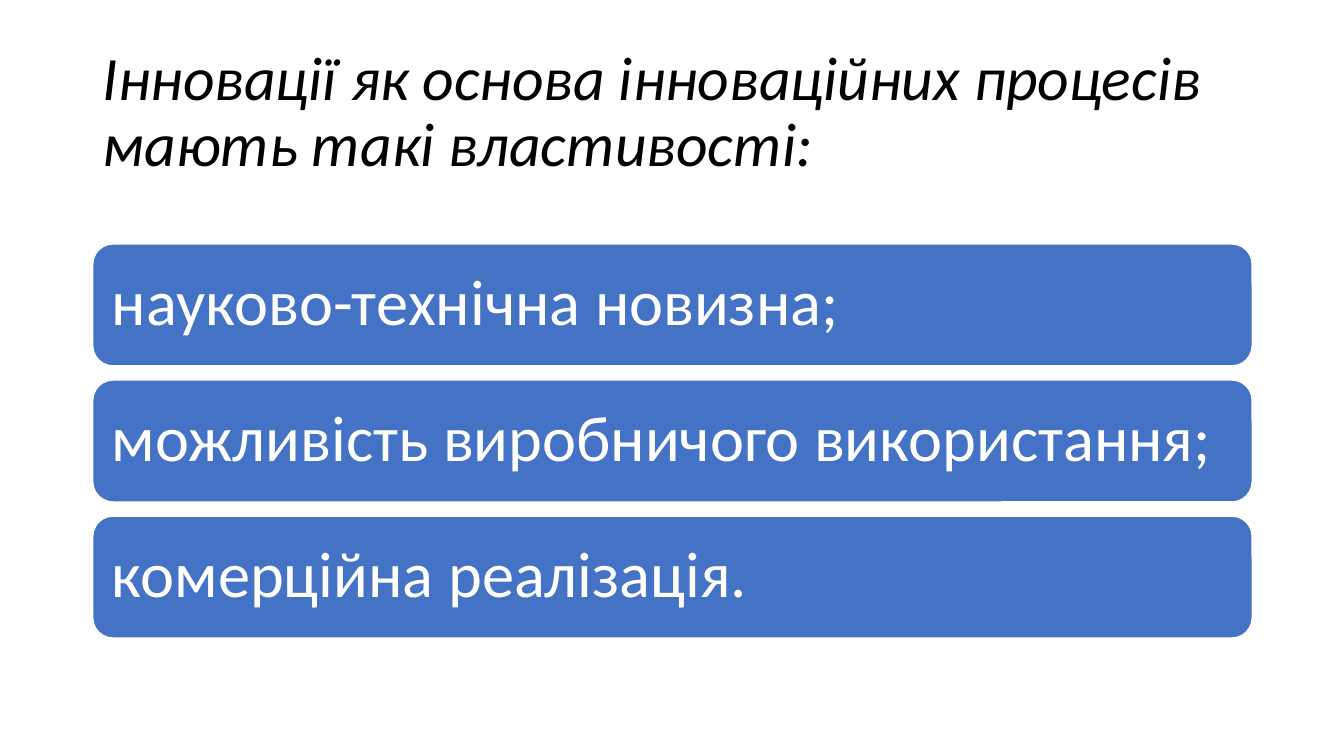
"""Build a slide listing the properties of innovations."""
from pptx import Presentation
from pptx import util as u
from pptx.dml import color
from pptx.enum import shapes, text

TITLE = "Інновації як основа інноваційних процесів мають такі властивості:"
PROPERTIES = [
    "науково-технічна новизна;",
    "можливість виробничого використання;",
    "комерційна реалізація.",
]
LEFT, WIDTH = 0.92, 11.5
BAR_TOP, BAR_HEIGHT, BAR_STEP = 2.42, 1.21, 1.35
BAR_INSET = 0.13


def rgb(value):
    """Turn a hex string into a colour."""
    return color.RGBColor.from_string(value)


def apply(target, values):
    """Set each attribute named in a dict of format values."""
    for name, value in values.items():
        setattr(target, name, value)


def write(shape, words, hex_color, size, inset_x, inset_y, italic=False):
    """Put one left-aligned, vertically centred paragraph into a shape."""
    frame = shape.text_frame
    frame.text = words
    apply(frame, {
        "word_wrap": True,
        "auto_size": text.MSO_AUTO_SIZE.NONE,
        "vertical_anchor": text.MSO_ANCHOR.MIDDLE,
        "margin_left": u.Inches(inset_x),
        "margin_right": u.Inches(inset_x),
        "margin_top": u.Inches(inset_y),
        "margin_bottom": u.Inches(inset_y),
    })
    para = frame.paragraphs[0]
    apply(para, {
        "alignment": text.PP_ALIGN.LEFT,
        "line_spacing": 0.9,
        "space_before": u.Pt(0),
    })
    span = para.runs[0]
    apply(span.font, {"name": "Calibri", "size": u.Pt(size), "italic": italic})
    span.font.color.rgb = rgb(hex_color)


def add_title(page, words):
    """Place and format the title placeholder."""
    title = page.shapes.title
    apply(title, {
        "left": u.Inches(LEFT),
        "top": u.Inches(0.4),
        "width": u.Inches(WIDTH),
        "height": u.Inches(1.45),
    })
    write(title, words, "000000", 44, 0.1, 0.05, italic=True)


def add_bar(page, top, words):
    """Add one rounded bar with its property."""
    bar = page.shapes.add_shape(
        shapes.MSO_SHAPE.ROUNDED_RECTANGLE,
        u.Inches(LEFT), u.Inches(top), u.Inches(WIDTH), u.Inches(BAR_HEIGHT),
    )
    bar.shadow.inherit = False
    bar.fill.solid()
    bar.fill.fore_color.rgb = rgb("4472C4")
    bar.line.color.rgb = rgb("FFFFFF")
    bar.line.width = u.Pt(1)
    write(bar, words, "FFFFFF", 46, BAR_INSET, BAR_INSET)


def main():
    """Create the deck and save it."""
    deck = Presentation()
    apply(deck, {"slide_width": u.Inches(13.33), "slide_height": u.Inches(7.5)})
    page = deck.slides.add_slide(deck.slide_layouts.get_by_name("Title Only"))
    add_title(page, TITLE)
    for index, words in enumerate(PROPERTIES):
        add_bar(page, BAR_TOP + index * BAR_STEP, words)
    deck.save("out.pptx")


if __name__ == "__main__":
    main()
